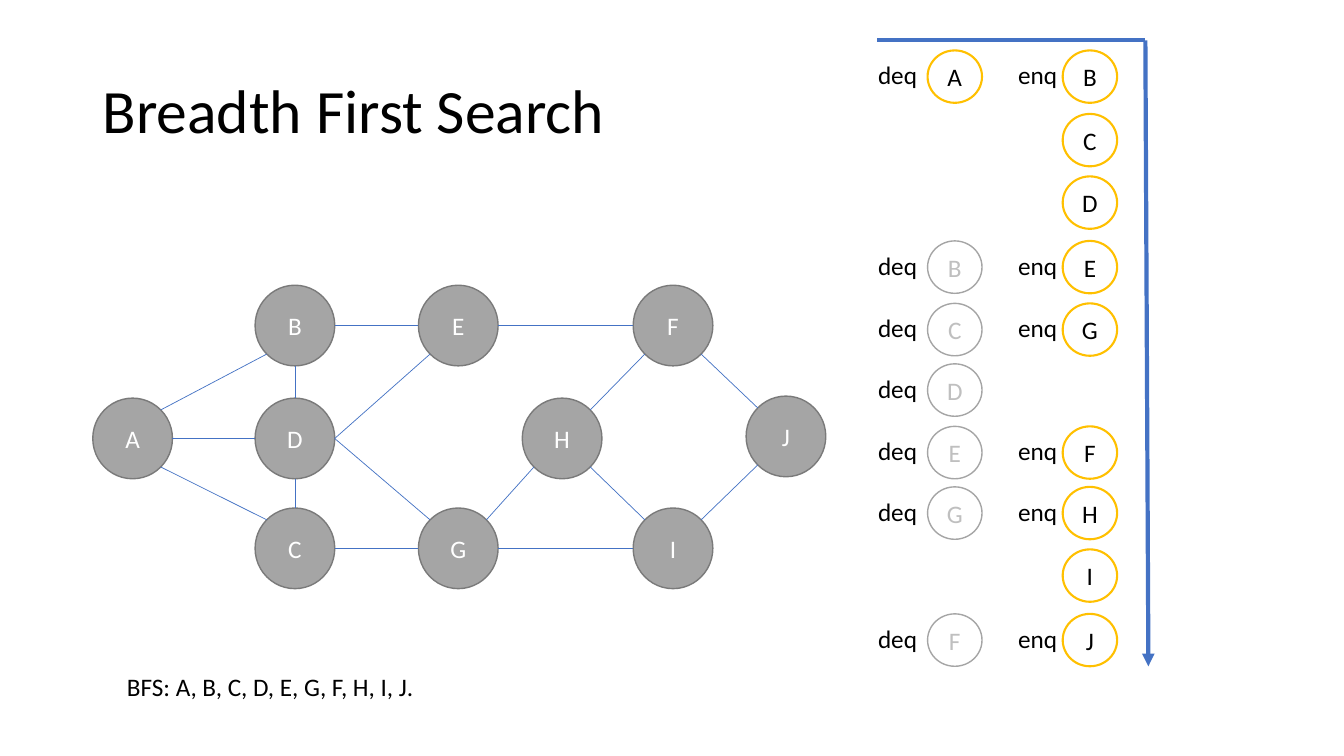
"""Build a slide that traces breadth first search on a graph with its queue."""
from dataclasses import dataclass
from math import sqrt

from lxml.etree import SubElement
from pptx import Presentation
from pptx.dml.color import RGBColor
from pptx.enum.shapes import MSO_CONNECTOR as Connector, MSO_SHAPE as Shape
from pptx.enum.text import MSO_ANCHOR as Anchor, MSO_AUTO_SIZE as AutoSize, PP_ALIGN as Align
from pptx.oxml.ns import qn
from pptx.util import Inches, Pt


@dataclass(frozen=True)
class Theme:
    font: str = "Calibri"
    title_size: int = 44
    body_size: int = 18
    black: str = "000000"
    white: str = "FFFFFF"
    node: str = "A5A5A5"
    node_border: str = "7A7A7A"
    enqueued: str = "FFC000"
    pale: str = "BFBFBF"
    blue: str = "4472C4"


theme = Theme()
presentation = Presentation()
presentation.slide_width, presentation.slide_height = Inches(13.33), Inches(7.5)
slide = presentation.slides.add_slide(presentation.slide_layouts[6])


def add_text(text, left, top, width, height, size=theme.body_size, color=theme.black,
             fill=None, border=None, border_width=1, wrap=False, anchor=Anchor.TOP, spacing=None):
    """Add a text box, or a filled circle with centred text when fill is given."""
    box = tuple(Inches(length) for length in (left, top, width, height))
    if fill:
        shape = slide.shapes.add_shape(Shape.OVAL, *box)
        shape.shadow.inherit = False
        shape.fill.solid()
        shape.fill.fore_color.rgb = RGBColor.from_string(fill)
        shape.line.color.rgb = RGBColor.from_string(border)
        shape.line.width = Pt(border_width)
    else:
        shape = slide.shapes.add_textbox(*box)
    frame = shape.text_frame
    frame.word_wrap = wrap or bool(fill)
    frame.auto_size = AutoSize.NONE if frame.word_wrap else AutoSize.SHAPE_TO_FIT_TEXT
    frame.vertical_anchor = Anchor.MIDDLE if fill else anchor
    paragraph = frame.paragraphs[0]
    paragraph.alignment = Align.CENTER if fill else Align.LEFT
    paragraph.line_spacing = spacing
    run = paragraph.add_run()
    run.text = text
    run.font.name, run.font.size = theme.font, Pt(size)
    run.font.color.rgb = RGBColor.from_string(color)


def add_line(start, end, width):
    """Add a straight blue line and return it."""
    line = slide.shapes.add_connector(
        Connector.STRAIGHT, *(Inches(length) for length in (*start, *end)))
    line.line.color.rgb = RGBColor.from_string(theme.blue)
    line.line.width = Pt(width)
    SubElement(line._element.spPr, qn("a:effectLst"))
    return line


add_text("Breadth First Search", 0.92, 0.4, 11.5, 1.45, size=theme.title_size,
         wrap=True, anchor=Anchor.MIDDLE, spacing=0.9)

node_width, node_height = 0.79, 0.8
nodes = {
    "A": (0.92, 3.95), "B": (2.53, 2.83), "D": (2.53, 3.95), "C": (2.53, 5.04),
    "E": (4.15, 2.83), "G": (4.15, 5.04), "F": (6.28, 2.83), "I": (6.28, 5.04),
    "H": (5.18, 3.95), "J": (7.4, 3.93),
}
for name, (left, top) in nodes.items():
    add_text(name, left, top, node_width, node_height, color=theme.white,
             fill=theme.node, border=theme.node_border)

diagonal = sqrt(0.5)
directions = {
    "n": (0, -1), "s": (0, 1), "e": (1, 0), "w": (-1, 0),
    "ne": (diagonal, -diagonal), "nw": (-diagonal, -diagonal),
    "se": (diagonal, diagonal), "sw": (-diagonal, diagonal),
}
edges = [
    ("A", "ne", "B", "sw"), ("A", "e", "D", "w"), ("A", "se", "C", "nw"),
    ("B", "s", "D", "n"), ("D", "s", "C", "n"), ("B", "e", "E", "w"),
    ("C", "e", "G", "w"), ("D", "e", "G", "nw"), ("D", "e", "E", "sw"),
    ("E", "e", "F", "w"), ("F", "sw", "H", "ne"), ("H", "sw", "G", "ne"),
    ("H", "se", "I", "nw"), ("G", "e", "I", "w"), ("F", "se", "J", "nw"),
    ("I", "ne", "J", "sw"),
]
for first, first_side, second, second_side in edges:
    ends = []
    for name, side in ((first, first_side), (second, second_side)):
        left, top = nodes[name]
        across, down = directions[side]
        ends.append((left + node_width / 2 * (1 + across), top + node_height / 2 * (1 + down)))
    add_line(*ends, width=0.5)

queue_steps = [
    (0.5, "A", "B"), (1.13, "", "C"), (1.75, "", "D"), (2.39, "B", "E"), (3.01, "C", "G"),
    (3.61, "D", ""), (4.23, "E", "F"), (4.83, "G", "H"), (5.45, "", "I"), (6.09, "F", "J"),
]
continued = {"C", "D", "I"}
for top, dequeued, enqueued in queue_steps:
    columns = (("deq", 8.61, 9.2, dequeued, dequeued == "A"),
               ("enq", 10, 10.54, enqueued, True))
    for label, label_left, circle_left, name, active in columns:
        if not name:
            continue
        add_text(name, circle_left, top, 0.54, 0.52, fill=theme.white,
                 color=theme.black if active else theme.pale,
                 border=theme.enqueued if active else theme.node,
                 border_width=1.5 if active else 1)
        if label == "deq" or name not in continued:
            add_text(label, label_left, top + 0.04, 0.59, 0.4)

add_text("BFS: A, B, C, D, E, G, F, H, I, J.", 1.16, 6.61, 3.08, 0.4)

add_line((8.7, 0.4), (11.36, 0.4), width=3)
time_arrow = add_line((11.36, 0.4), (11.39, 6.61), width=3)
SubElement(time_arrow.line._get_or_add_ln(), qn("a:tailEnd"), type="triangle")

presentation.save("out.pptx")
